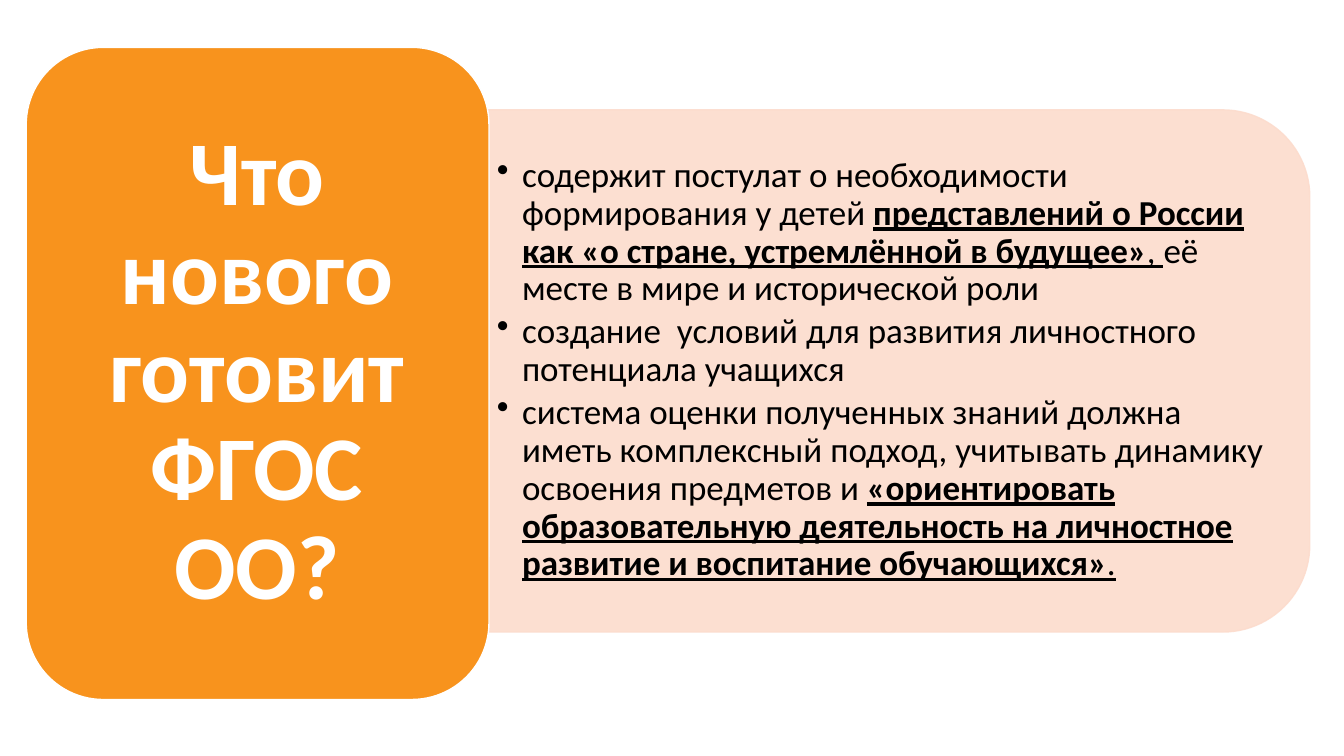
import pptx
import pptx.util
import pptx.dml.color
import pptx.enum.shapes
import pptx.enum.text
import pptx.oxml
import pptx.oxml.ns

Inches = pptx.util.Inches
Pt = pptx.util.Pt
SHAPES = pptx.enum.shapes.MSO_SHAPE
ALIGN = pptx.enum.text.PP_ALIGN

COLOURS = {"peach": "FCDCCD", "orange": "F8931D", "white": "FFFFFF", "black": "000000"}

QUESTION = "Что нового готовит ФГОС ОО?"
# Each point is a list of (text, format) pieces
KEY = {"bold": True, "underline": True}
KEY_END = {"underline": True}
POINTS = [
    [("содержит постулат о необходимости формирования у детей ", {}),
     ("представлений о России как «о стране, устремлённой в будущее»", KEY),
     (", ", KEY_END),
     ("её месте в мире и исторической роли", {})],
    [("создание  условий для развития личностного потенциала учащихся", {})],
    [("система оценки полученных знаний должна иметь комплексный подход, "
      "учитывать динамику освоения предметов и ", {}),
     ("«ориентировать образовательную деятельность на личностное развитие "
      "и воспитание обучающихся»", KEY),
     (".", KEY_END)],
]


def rgb(name):
    return pptx.dml.color.RGBColor.from_string(COLOURS[name])


def add_text(paragraph, text, size=25, colour="black", bold=False, underline=False):
    piece = paragraph.add_run()
    piece.text = text
    piece.font.name = "Calibri"
    piece.font.size = Pt(size)
    piece.font.bold = bold
    piece.font.underline = underline
    piece.font.color.rgb = rgb(colour)


class SlideBuilder:
    def __init__(self, deck):
        self.slide = deck.slides.add_slide(deck.slide_layouts[5])

    def panel(self, preset, left, top, width, height, fill, line, rotation=0, alpha=None):
        panel = self.slide.shapes.add_shape(
            preset, Inches(left), Inches(top), Inches(width), Inches(height))
        panel.shadow.inherit = False
        panel.rotation = rotation
        panel.fill.solid()
        panel.fill.fore_color.rgb = rgb(fill)
        panel.line.color.rgb = rgb(line)
        panel.line.width = Pt(1)
        if alpha is not None:
            for colour in panel._element.spPr.iter(pptx.oxml.ns.qn("a:srgbClr")):
                opacity = pptx.oxml.parse_xml(
                    f'<a:alpha {pptx.oxml.ns.nsdecls("a")} val="{alpha * 1000}"/>')
                colour.append(opacity)

    def frame(self, box, margin_x, margin_y):
        frame = box.text_frame
        frame.word_wrap = True
        frame.auto_size = pptx.enum.text.MSO_AUTO_SIZE.NONE
        frame.vertical_anchor = pptx.enum.text.MSO_ANCHOR.MIDDLE
        frame.margin_left = frame.margin_right = Inches(margin_x)
        frame.margin_top = frame.margin_bottom = Inches(margin_y)
        return frame

    def title(self, text, left, top, width, height):
        title = self.slide.shapes.title
        title.left, title.top = Inches(left), Inches(top)
        title.width, title.height = Inches(width), Inches(height)
        # Bring the title in front of its card
        self.slide.shapes._spTree.append(title._element)
        line = self.frame(title, 0.27, 0.14).paragraphs[0]
        line.alignment = ALIGN.CENTER
        line.line_spacing = 0.9
        add_text(line, text, size=65, colour="white", bold=True)

    def bullets(self, points, left, top, width, height):
        box = self.slide.shapes.add_textbox(
            Inches(left), Inches(top), Inches(width), Inches(height))
        frame = self.frame(box, 0.1, 0.05)
        for number, point in enumerate(points):
            line = frame.add_paragraph() if number else frame.paragraphs[0]
            line.alignment = ALIGN.LEFT
            line.line_spacing = 0.9
            line.space_after = Pt(3.75)
            properties = line._p.get_or_add_pPr()
            properties.set("marL", str(Inches(0.25)))
            properties.set("indent", str(-Inches(0.25)))
            properties.append(pptx.oxml.parse_xml(
                f'<a:buChar {pptx.oxml.ns.nsdecls("a")} char="•"/>'))
            for text, style in point:
                add_text(line, text, **style)


def main():
    deck = pptx.Presentation()
    deck.slide_width, deck.slide_height = Inches(13.33), Inches(7.5)
    builder = SlideBuilder(deck)

    # Answers on the right
    builder.panel(SHAPES.ROUND_2_SAME_RECTANGLE, 6.32, -0.4, 5.18, 8.16,
                  "peach", "peach", rotation=90, alpha=90)
    builder.bullets(POINTS, 4.83, 1.34, 7.9, 4.67)

    # Question card on the left
    builder.panel(SHAPES.ROUNDED_RECTANGLE, 0.26, 0.47, 4.59, 6.47, "orange", "white")
    builder.title(QUESTION, 0.48, 0.69, 4.14, 6.02)

    deck.save("out.pptx")


if __name__ == "__main__":
    main()
